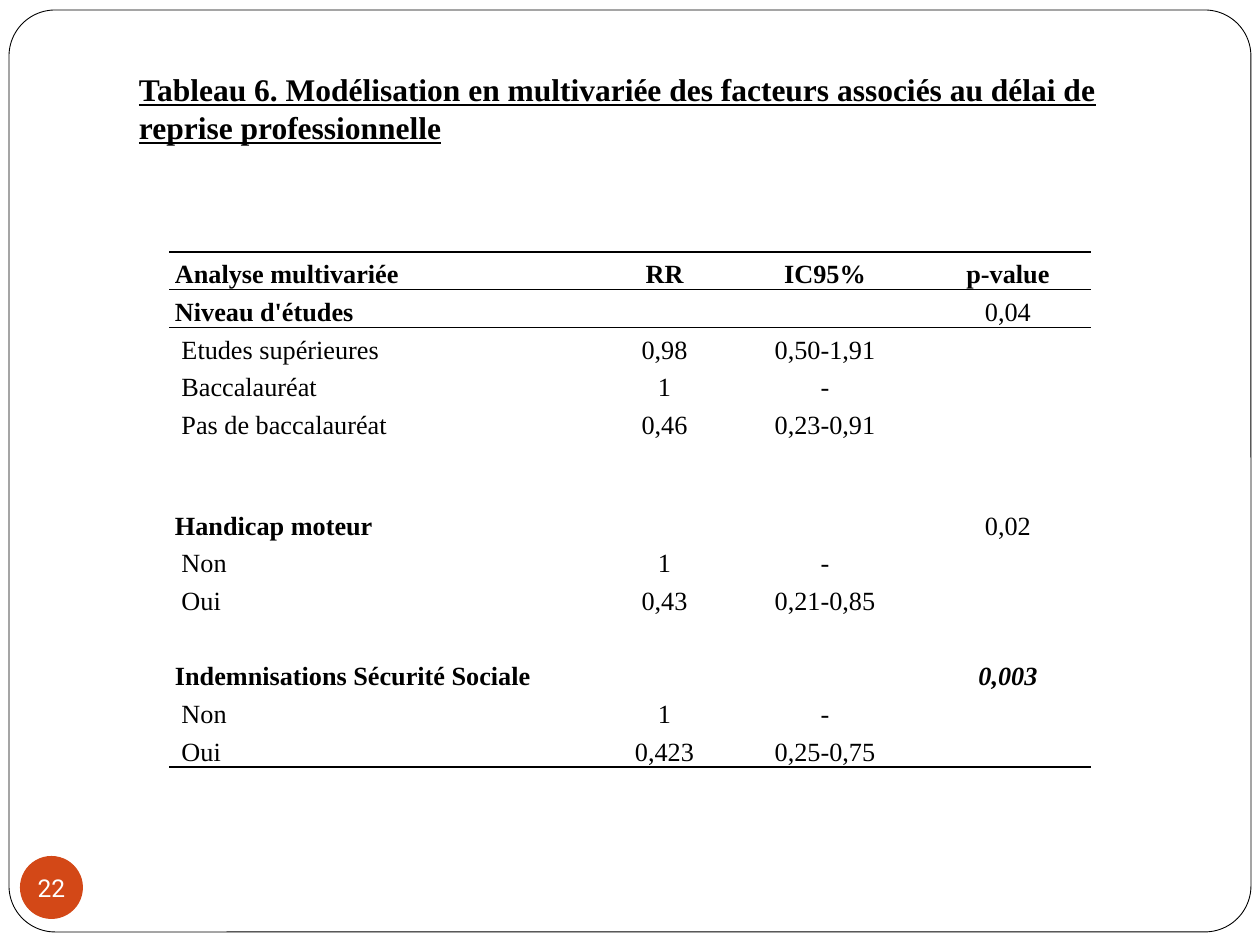
import lxml.etree
import pptx
import pptx.dml.color
import pptx.enum.shapes
import pptx.enum.text
import pptx.oxml.ns
import pptx.util

EMU_PER_PX = 914400 / 126
COLORS = {"ink": "000000", "paper": "FFFFFF", "badge": "D34817"}
SERIF = "Times New Roman"
NO_TABLE_STYLE = "{2D5ABB26-0587-4C30-8999-92F81FD0307C}"
ALIGN = pptx.enum.text.PP_ALIGN
ANCHOR = pptx.enum.text.MSO_ANCHOR
SHAPE = pptx.enum.shapes.MSO_SHAPE

TITLE = ("Tableau 6. Modélisation en multivariée des facteurs associés "
         "au délai de reprise professionnelle")
ROWS = [
    ("Analyse multivariée", "RR", "IC95%", "p-value"),
    ("Niveau d'études", "", "", "0,04"),
    (" Etudes supérieures", "0,98", "0,50-1,91", ""),
    (" Baccalauréat", "1", "-", ""),
    (" Pas de baccalauréat", "0,46", "0,23-0,91", ""),
    ("", "", "", ""),
    ("Handicap moteur", "", "", "0,02"),
    (" Non", "1", "-", ""),
    (" Oui", "0,43", "0,21-0,85", ""),
    ("", "", "", ""),
    ("Indemnisations Sécurité Sociale", "", "", "0,003"),
    (" Non", "1", "-", ""),
    (" Oui", "0,423", "0,25-0,75", ""),
]
COLUMN_WIDTHS = (435, 121, 200, 166)
TABLE_HEIGHT = 515
TALL_ROW, TALL_HEIGHT = 5, 63
SIGNIFICANT = "0,003"


def px(length):
    return pptx.util.Emu(round(length * EMU_PER_PX))


def rgb(name):
    return pptx.dml.color.RGBColor.from_string(COLORS[name])


def set_attributes(target, values):
    for name, value in values.items():
        setattr(target, name, value)


def set_box(shape, left, top, width, height):
    set_attributes(shape, {"left": px(left), "top": px(top),
                           "width": px(width), "height": px(height)})


def set_margins(target, left, top, right, bottom):
    set_attributes(target, {"margin_left": px(left), "margin_top": px(top),
                            "margin_right": px(right), "margin_bottom": px(bottom)})


def write_text(paragraph, text, size, align, color="ink", name=SERIF, **styles):
    paragraph.alignment = align
    run = paragraph.add_run()
    run.text = text
    set_attributes(run.font, {"size": pptx.util.Pt(size), "name": name, **styles})
    run.font.color.rgb = rgb(color)


def add_filled_shape(slide, kind, box, color):
    shape = slide.shapes.add_shape(kind, *map(px, box))
    shape.shadow.inherit = False
    shape.fill.solid()
    shape.fill.fore_color.rgb = rgb(color)
    return shape


def add_frame(slide):
    """Add the rounded slide border behind everything else."""
    frame = add_filled_shape(slide, SHAPE.ROUNDED_RECTANGLE, (9, 10, 1242, 922), "paper")
    frame.adjustments[0] = 0.05
    frame.line.color.rgb = rgb("ink")
    frame.line.width = pptx.util.Pt(0.5)
    slide.shapes.title._element.addprevious(frame._element)


def fill_title(slide):
    title = slide.shapes.title
    set_box(title, 126, 38, 1071, 157)
    text_frame = title.text_frame
    set_attributes(text_frame, {"word_wrap": True, "vertical_anchor": ANCHOR.BOTTOM,
                                "auto_size": pptx.enum.text.MSO_AUTO_SIZE.NONE})
    set_margins(text_frame, 13, 6, 13, 49)
    write_text(text_frame.paragraphs[0], TITLE, 18, ALIGN.LEFT, bold=True, underline=True)


def add_page_badge(slide, number):
    badge = add_filled_shape(slide, SHAPE.OVAL, (20, 856, 63, 63), "badge")
    badge.line.fill.background()
    text_frame = badge.text_frame
    set_attributes(text_frame, {"word_wrap": False, "vertical_anchor": ANCHOR.MIDDLE})
    set_margins(text_frame, 0, 0, 0, 0)
    write_text(text_frame.paragraphs[0], number, 14, ALIGN.CENTER, "paper", "Roboto")


def add_border(cell, side):
    """Draw one side of a cell; side is lnT or lnB."""
    qn = pptx.oxml.ns.qn
    properties = cell._tc.get_or_add_tcPr()
    line = lxml.etree.SubElement(properties, qn(f"a:{side}"), w=str(pptx.util.Pt(1)))
    fill = lxml.etree.SubElement(line, qn("a:solidFill"))
    lxml.etree.SubElement(fill, qn("a:srgbClr"), val=COLORS["ink"])


def fill_cell(cell, text, row, column):
    cell.vertical_anchor = ANCHOR.BOTTOM
    set_margins(cell, 6, 0, 6, 0)
    if row <= 1:
        add_border(cell, "lnT")
    if row in (0, len(ROWS) - 1):
        add_border(cell, "lnB")
    cell.fill.background()
    paragraph = cell.text_frame.paragraphs[0]
    if not text:
        # Keeps an empty cell from stretching its row.
        paragraph._p.get_or_add_endParaRPr().set("sz", "1500")
        return
    is_heading = column == 0 and not text.startswith(" ")
    write_text(paragraph, text, 15, ALIGN.CENTER if column else ALIGN.LEFT,
               bold=row == 0 or is_heading or text == SIGNIFICANT,
               italic=text == SIGNIFICANT)


def add_results_table(slide):
    graphic = slide.shapes.add_table(len(ROWS), len(COLUMN_WIDTHS), px(169), px(252),
                                     px(sum(COLUMN_WIDTHS)), px(TABLE_HEIGHT))
    table = graphic.table
    set_attributes(table, {"first_row": False, "horz_banding": False})
    table._tbl.tblPr.find(pptx.oxml.ns.qn("a:tableStyleId")).text = NO_TABLE_STYLE
    for column, width in zip(table.columns, COLUMN_WIDTHS):
        column.width = px(width)
    row_height = (TABLE_HEIGHT - TALL_HEIGHT) / (len(ROWS) - 1)
    for row, texts in enumerate(ROWS):
        table.rows[row].height = px(TALL_HEIGHT if row == TALL_ROW else row_height)
        for column, text in enumerate(texts):
            fill_cell(table.cell(row, column), text, row, column)


def main():
    presentation = pptx.Presentation()
    set_attributes(presentation, {"slide_width": px(1260), "slide_height": px(945)})
    slide = presentation.slides.add_slide(presentation.slide_layouts.get_by_name("Title Only"))
    add_frame(slide)
    fill_title(slide)
    add_page_badge(slide, "22")
    add_results_table(slide)
    presentation.save("out.pptx")


if __name__ == "__main__":
    main()
